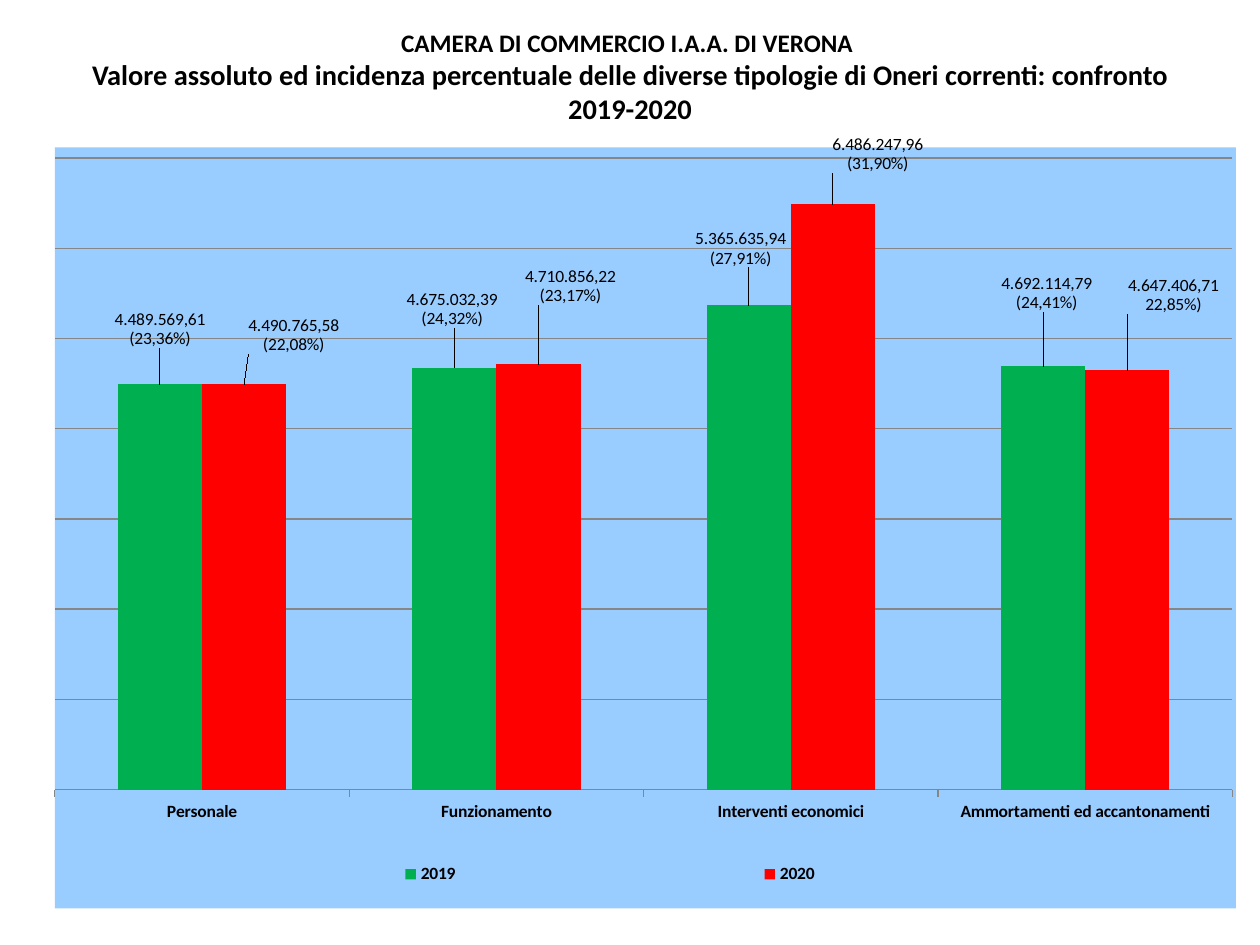
from lxml import etree
from pptx import Presentation
from pptx import util as u
from pptx.chart.data import CategoryChartData
from pptx.dml.color import RGBColor
from pptx.enum import chart as ch, text
from pptx.oxml import parse_xml
from pptx.oxml.ns import nsdecls, qn

BLACK = RGBColor(0x00, 0x00, 0x00)
GREEN = RGBColor(0x00, 0xB0, 0x50)
RED = RGBColor(0xFF, 0x00, 0x00)
SKY = RGBColor(0x99, 0xCC, 0xFF)
GREY = RGBColor(0x86, 0x86, 0x86)

CATEGORIES = ["Personale", "Funzionamento", "Interventi economici",
              "Ammortamenti ed accantonamenti"]
SERIES = [
    ("2019", GREEN, [
        (4489569.61, "4.489.569,61", "(23,36%)", 0, -0.041),
        (4675032.39, "4.675.032,39", "(24,32%)", -0.002, -0.045),
        (5365635.94, "5.365.635,94", "(27,91%)", -0.007, -0.043),
        (4692114.79, "4.692.114,79", "(24,41%)", 0.003, -0.064)]),
    ("2020", RED, [
        (4490765.58, "4.490.765,58", "(22,08%)", 0.042, -0.033),
        (4710856.22, "4.710.856,22", "(23,17%)", 0.027, -0.071),
        (6486247.96, "6.486.247,96", "(31,90%)", 0.038, -0.034),
        (4647406.71, "4.647.406,71", "22,85%)", 0.039, -0.067)]),
]


def layout(x, y, w=None, h=None, inner=False, edge=True):
    """Return a manual chart layout in fractions of the chart."""
    el = parse_xml(f"<c:layout {nsdecls('c')}><c:manualLayout/></c:layout>")
    items = [("layoutTarget", "inner")] if inner else []
    if edge:
        items += [("xMode", "edge"), ("yMode", "edge")]
    items += [("x", x), ("y", y), ("w", w), ("h", h)]
    for tag, val in items:
        if val is not None:
            etree.SubElement(el[0], qn(f"c:{tag}")).set("val", str(val))
    return el


class Deck:
    """Holds the style and the current slide."""

    def __init__(self, font="Calibri"):
        self.font = font
        self.prs = Presentation()
        self.prs.slide_width, self.prs.slide_height = u.Inches(10), u.Inches(7.5)
        self.s = self.prs.slides.add_slide(self.prs.slide_layouts[5])

    def style(self, f, size, bold=False):
        f.name, f.size, f.bold = self.font, u.Pt(size), bold
        f.color.rgb = BLACK

    def run(self, p, words, size, bold=False):
        r = p.add_run()
        r.text = words
        self.style(r.font, size, bold)

    def title(self, box, lines):
        sp = self.s.shapes.title
        sp.left, sp.top, sp.width, sp.height = map(u.Inches, box)
        tf = sp.text_frame
        tf.word_wrap = True
        tf.auto_size = text.MSO_AUTO_SIZE.NONE
        tf.vertical_anchor = text.MSO_ANCHOR.MIDDLE
        p = tf.paragraphs[0]
        p.alignment = text.PP_ALIGN.CENTER
        for i, (words, size) in enumerate(lines):
            if i:
                p.add_line_break()
            self.run(p, words, size, True)

    def label(self, point, lines, dx, dy):
        lab = point.data_label
        tf = lab.text_frame
        for i, words in enumerate(lines):
            p = tf.add_paragraph() if i else tf.paragraphs[0]
            self.run(p, words, 10)
        lab.position = ch.XL_LABEL_POSITION.OUTSIDE_END
        dlbl = tf._txBody.getparent().getparent()
        for old in dlbl.findall(qn("c:layout")):
            dlbl.remove(old)
        dlbl.find(qn("c:idx")).addnext(layout(dx, dy, edge=False))

    def columns(self, box, categories, series):
        data = CategoryChartData(number_format="#,##0.00")
        data.categories = categories
        for name, _, points in series:
            data.add_series(name, [pt[0] for pt in points])
        chart = self.s.shapes.add_chart(
            ch.XL_CHART_TYPE.COLUMN_CLUSTERED, *map(u.Inches, box), data).chart
        chart.has_title = False
        self.style(chart.font, 10)
        fill = parse_xml(
            f"<c:spPr {nsdecls('c', 'a')}><a:solidFill><a:srgbClr val='{SKY}'/>"
            "</a:solidFill><a:ln><a:noFill/></a:ln></c:spPr>")
        chart._chartSpace.find(qn("c:txPr")).addprevious(fill)

        area = chart._chartSpace.chart.plotArea
        for old in area.findall(qn("c:layout")):
            area.remove(old)
        area.insert(0, layout(0, 0.014, 0.997, 0.83, inner=True))

        plot = chart.plots[0]
        plot.gap_width, plot.overlap, plot.vary_by_categories = 150, 0, False
        for ser, (_, color, points) in zip(plot.series, series):
            ser.format.fill.solid()
            ser.format.fill.fore_color.rgb = color
            labels = ser.data_labels
            labels.show_value = True
            labels.number_format = "#,##0.00"
            labels.number_format_is_linked = False
            self.style(labels.font, 10, True)
            for i, (_, amount, share, dx, dy) in enumerate(points):
                self.label(ser.points[i], (amount, share), dx, dy)
        self.axes(chart)
        self.legend(chart)

    def axes(self, chart):
        cat, val = chart.category_axis, chart.value_axis
        self.style(cat.tick_labels.font, 10, True)
        cat.major_tick_mark = ch.XL_TICK_MARK.OUTSIDE
        val.minimum_scale, val.maximum_scale, val.major_unit = 0, 7000000, 1000000
        val.tick_labels.number_format = "#,##0.00"
        val.tick_labels.number_format_is_linked = False
        val.has_major_gridlines = True
        val.visible = False
        for line in (cat.format.line, val.major_gridlines.format.line):
            line.color.rgb = GREY
            line.width = u.Pt(0.75)

    def legend(self, chart):
        chart.has_legend = True
        leg = chart.legend
        leg.position = ch.XL_LEGEND_POSITION.RIGHT
        leg.include_in_layout = False
        self.style(leg.font, 10, True)
        for old in leg._element.findall(qn("c:layout")):
            leg._element.remove(old)
        leg._element.find(qn("c:legendPos")).addnext(
            layout(0.04, 0.92, 0.86, 0.07))


def main():
    deck = Deck()
    deck.title((0.5, 0.3, 9, 0.61), [
        ("CAMERA DI COMMERCIO I.A.A. DI VERONA ", 14.4),
        ("Valore assoluto ed incidenza percentuale delle diverse tipologie "
         "di Oneri correnti: confronto 2019-2020", 16.2)])
    deck.columns((0.43, 1.07, 9.38, 6.14), CATEGORIES, SERIES)
    deck.prs.save("out.pptx")


if __name__ == "__main__":
    main()
